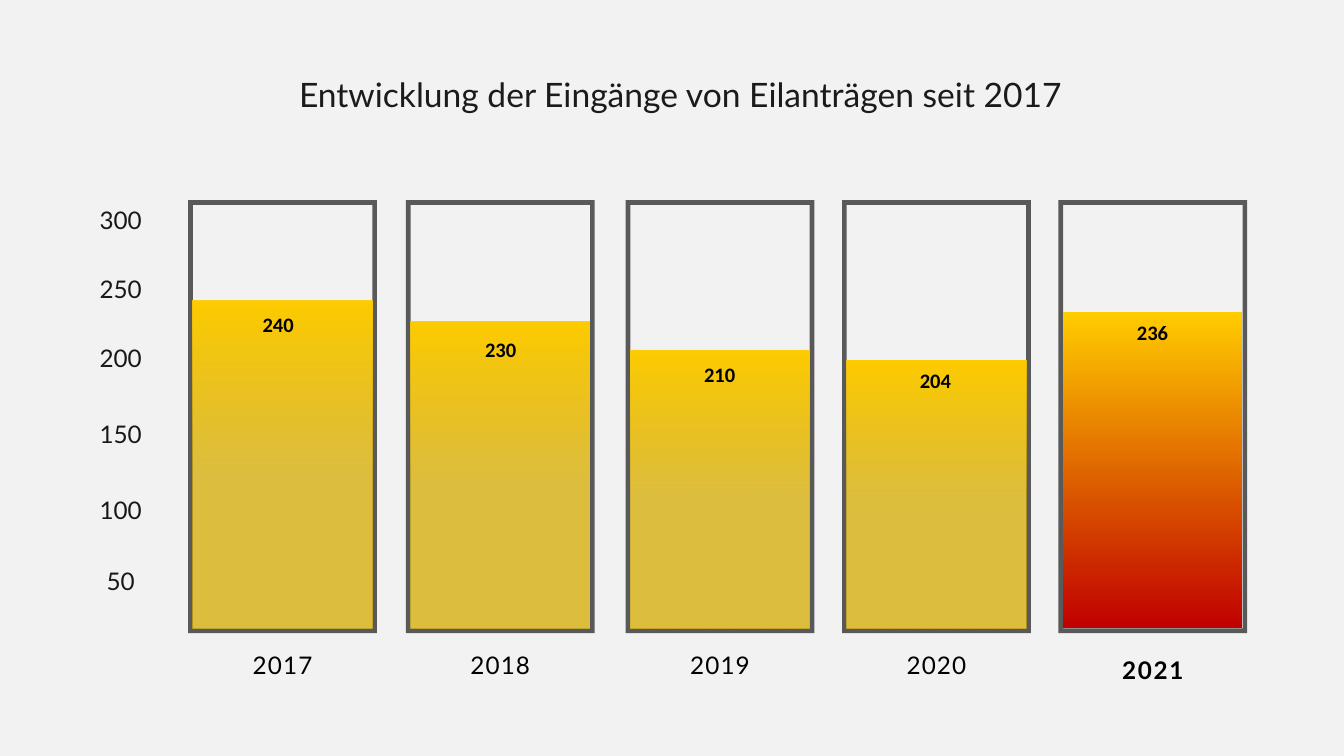
import pptx
import pptx.dml.color
import pptx.enum.shapes
import pptx.enum.text
import pptx.oxml
import pptx.oxml.ns
import pptx.util
from dataclasses import dataclass

Inches = pptx.util.Inches
Align = pptx.enum.text.PP_ALIGN


@dataclass(frozen=True)
class Theme:
    back: str = "F2F2F2"
    frame: str = "595959"
    title: str = "1B1B1B"
    axis: str = "191919"
    text: str = "000000"
    gold: str = "FFCC00"
    dull: str = "D7AC00"
    red: str = "C00000"
    face: str = "Lato"
    digit: str = "Calibri"
    head: int = 36
    tick: int = 26
    value: int = 22


def color(code):
    return pptx.dml.color.RGBColor.from_string(code)


def apply(target, values):
    for name, value in values.items():
        setattr(target, name, value)


class Chart:
    def __init__(self, slide, theme):
        self.slide = slide
        self.theme = theme
        fill = slide.background.fill
        fill.solid()
        fill.fore_color.rgb = color(theme.back)

    def letter(self, shape, text, size, tint, face, bold=False,
               lead=None, align=Align.CENTER, track=0, inset=0, wrap=True):
        frame = shape.text_frame
        apply(frame, {
            "word_wrap": wrap,
            "auto_size": pptx.enum.text.MSO_AUTO_SIZE.SHAPE_TO_FIT_TEXT,
            "vertical_anchor": pptx.enum.text.MSO_ANCHOR.TOP,
            "margin_left": Inches(inset),
            "margin_right": Inches(inset),
            "margin_top": Inches(inset / 2),
            "margin_bottom": Inches(inset / 2),
        })
        para = frame.paragraphs[0]
        para.alignment = align
        if lead:
            para.line_spacing = pptx.util.Pt(lead)
        run = para.add_run()
        run.text = text
        apply(run.font, {"size": pptx.util.Pt(size), "name": face, "bold": bold})
        run.font.color.rgb = color(tint)
        if track:
            run.font._element.set("spc", str(round(track * 100)))

    def title(self, text, left, top, width, height):
        shape = self.slide.shapes.title
        apply(shape, {
            "left": Inches(left), "top": Inches(top),
            "width": Inches(width), "height": Inches(height),
        })
        look = self.theme
        self.letter(shape, text, look.head, look.title, look.face, lead=39.6)

    def label(self, text, left, top, width, height, **style):
        box = self.slide.shapes.add_textbox(*map(Inches, (left, top, width, height)))
        self.letter(box, text, **style)

    def frame(self, left, top, width, height, edge):
        def ring(inset):
            x, y = left + inset, top + inset
            right, base = left + width - inset, top + height - inset
            return [(Inches(a), Inches(b)) for a, b in
                    ((x, y), (x, base), (right, base), (right, y))]

        outer, inner = ring(0), ring(edge)[::-1]
        shape = self.slide.shapes
        pen = shape.build_freeform(*outer[0])
        pen.add_line_segments(outer[1:], close=True)
        pen.move_to(*inner[0])
        pen.add_line_segments(inner[1:], close=True)
        shape = pen.convert_to_shape()
        shape.shadow.inherit = False
        shape.fill.solid()
        shape.fill.fore_color.rgb = color(self.theme.frame)
        shape.line.fill.background()

    def bar(self, left, top, width, height, low, start, alpha):
        shape = self.slide.shapes.add_shape(
            pptx.enum.shapes.MSO_SHAPE.RECTANGLE,
            *map(Inches, (left, top, width, height)))
        shape.shadow.inherit = False
        shape.line.fill.background()
        fill = shape.fill
        fill.gradient()
        fill.gradient_angle = 90
        stops = ((start, low), (1, self.theme.gold))
        for stop, (place, tint) in zip(fill.gradient_stops, stops):
            stop.position = place
            stop.color.rgb = color(tint)
        if alpha < 100:
            mark = next(shape.element.iter(pptx.oxml.ns.qn("a:srgbClr")))
            mark.append(pptx.oxml.parse_xml(
                f'<a:alpha {pptx.oxml.ns.nsdecls("a")} val="{alpha * 1000}"/>'))


def main():
    deck = pptx.Presentation()
    apply(deck, {"slide_width": Inches(20), "slide_height": Inches(11.25)})
    look = Theme()
    chart = Chart(deck.slides.add_slide(deck.slide_layouts[5]), look)

    chart.title("Entwicklung der Eingänge von Eilanträgen seit 2017",
                1.25, 1.15, 17.75, 0.57)

    axis = {"size": look.tick, "tint": look.axis, "face": look.face, "lead": 36.4}
    tops = (2.98, 4.01, 5.04, 6.17, 7.3, 8.35)
    for tick, top in zip(range(300, 0, -50), tops):
        chart.label(str(tick), 1.29, top, 1.01, 0.46, **axis)

    edge, base, width = 0.07, 9.35, 2.81
    dim = {"low": look.dull, "start": 0.48, "alpha": 74}
    hot = {"low": look.red, "start": 0, "alpha": 100}
    year = {"size": look.tick, "tint": look.text, "face": look.face}
    plain = {**year, "lead": 36, "track": 1.2}
    strong = {**year, "lead": 55.1, "track": 1.8, "bold": True}
    count = {"size": look.value, "tint": look.text, "face": look.digit, "bold": True,
             "align": Align.LEFT, "inset": 0.1, "wrap": False}
    data = (
        ("2017", 240, 2.8, 4.47, 3.81, 4.6),
        ("2018", 230, 6.04, 4.79, 7.12, 4.96),
        ("2019", 210, 9.31, 5.22, 10.38, 5.34),
        ("2020", 204, 12.53, 5.36, 13.59, 5.43),
        ("2021", 236, 15.75, 4.65, 16.82, 4.72),
    )
    for name, value, left, top, x, y in data:
        last = name == "2021"
        chart.frame(left, 2.98, width, 6.44, edge)
        chart.bar(left + edge, top, width - 2 * edge, base - top,
                  **(hot if last else dim))
        chart.label(str(value), x, y, 0.67, 0.47, **count)
        foot, tall = (9.42, 0.66) if last else (9.61, 0.46)
        chart.label(name, left + 0.31, foot, 2.19, tall,
                    **(strong if last else plain))

    deck.save("out.pptx")


if __name__ == "__main__":
    main()
